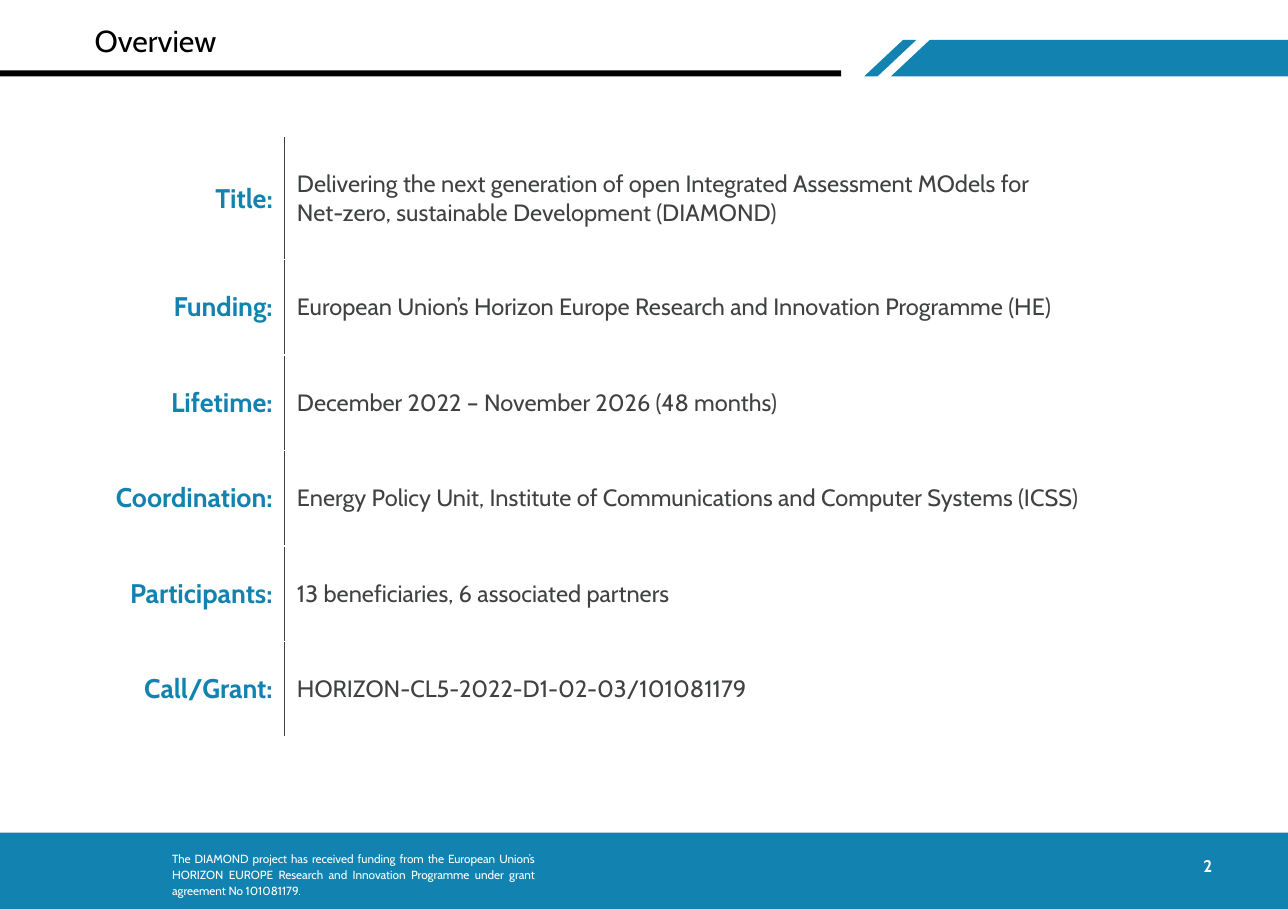
from dataclasses import dataclass

from lxml import etree
from pptx import Presentation
from pptx import util as u
from pptx.dml import color
from pptx.enum import shapes, text
from pptx.oxml import ns


@dataclass(frozen=True)
class Theme:
    font: str = "Cabin"
    blue: str = "1283B1"
    white: str = "FFFFFF"
    black: str = "000000"
    body: str = "404141"
    title_size: float = 18
    label_size: float = 16
    body_size: float = 14
    number_size: float = 10
    note_size: float = 7
    border_width: float = 1
    divider_width: float = 0.5


@dataclass(frozen=True)
class Fact:
    label: str
    lines: tuple[str, ...]


@dataclass(frozen=True)
class Band:
    points: tuple[tuple[float, float], ...]
    fill: str


THEME = Theme()
SLIDE_WIDTH, SLIDE_HEIGHT = 85 / 8, 7.5

BANDS = (
    Band(((7.13, 0.63), (7.45, 0.33), (7.56, 0.33), (7.24, 0.63)), THEME.blue),
    Band(((7.35, 0.63), (7.67, 0.33), (SLIDE_WIDTH, 0.33), (SLIDE_WIDTH, 0.63)), THEME.blue),
)

FACTS = (
    Fact("Title:", ("Delivering the next generation of open Integrated Assessment MOdels for",
                    "Net-zero, sustainable Development (DIAMOND)")),
    Fact("Funding:", ("European Union’s Horizon Europe Research and Innovation Programme (HE)",)),
    Fact("Lifetime:", ("December 2022 – November 2026 (48 months)",)),
    Fact("Coordination:",
         ("Energy Policy Unit, Institute of Communications and Computer Systems (ICSS)",)),
    Fact("Participants:", ("13 beneficiaries, 6 associated partners",)),
    Fact("Call/Grant:", ("HORIZON-CL5-2022-D1-02-03/101081179",)),
)

FUNDING_NOTE = ("The DIAMOND project has received funding from the European Union’s "
                "HORIZON EUROPE Research and Innovation Programme under grant "
                "agreement No 101081179.")


def rgb(value: str) -> color.RGBColor:
    return color.RGBColor.from_string(value)


def write(frame, lines: tuple[str, ...], size: float, ink: str, bold: bool = False,
          align=text.PP_ALIGN.LEFT, spacing: float = 1.0) -> None:
    """Fill a text frame with one paragraph per line."""
    for index, line in enumerate(lines):
        paragraph = frame.add_paragraph() if index else frame.paragraphs[0]
        paragraph.text = line
        paragraph.alignment = align
        paragraph.line_spacing = spacing
        paragraph.font.name = THEME.font
        paragraph.font.size = u.Pt(size)
        paragraph.font.bold = bold
        paragraph.font.color.rgb = rgb(ink)


def paint(shape, fill: str) -> None:
    shape.shadow.inherit = False
    shape.fill.solid()
    shape.fill.fore_color.rgb = rgb(fill)
    shape.line.fill.background()


def add_band(slide, band: Band) -> None:
    start, *rest = [(u.Inches(x), u.Inches(y)) for x, y in band.points]
    builder = slide.shapes.build_freeform(*start)
    builder.add_line_segments(rest, close=True)
    paint(builder.convert_to_shape(), band.fill)


def add_bar(slide, left: float, top: float, width: float, height: float, fill: str) -> None:
    paint(slide.shapes.add_shape(shapes.MSO_SHAPE.RECTANGLE, u.Inches(left), u.Inches(top),
                                 u.Inches(width), u.Inches(height)), fill)


def add_box(slide, left: float, top: float, width: float, height: float, wrap: bool):
    frame = slide.shapes.add_textbox(u.Inches(left), u.Inches(top), u.Inches(width),
                                     u.Inches(height)).text_frame
    frame.word_wrap = wrap
    frame.margin_left = frame.margin_right = u.Inches(0.05)
    frame.margin_top = frame.margin_bottom = u.Inches(0.05)
    return frame


def format_cell(cell, divider_side: str) -> None:
    """White borders, except for the side on the column divider."""
    cell.vertical_anchor = text.MSO_ANCHOR.MIDDLE
    properties = cell._tc.get_or_add_tcPr()
    for side in ("lnL", "lnR", "lnT", "lnB"):
        ink, width = ((THEME.body, THEME.divider_width) if side == divider_side
                      else (THEME.white, THEME.border_width))
        border = etree.SubElement(properties, ns.qn(f"a:{side}"), w=str(u.Pt(width)))
        fill = etree.SubElement(border, ns.qn("a:solidFill"))
        etree.SubElement(fill, ns.qn("a:srgbClr"), val=ink)
    cell.fill.background()


def add_facts(slide, facts: tuple[Fact, ...]) -> None:
    widths = (1.68, 7.6)
    total, first = 4.94, 1
    other = (total - first) / (len(facts) - 1)
    table = slide.shapes.add_table(
        len(facts), len(widths), u.Inches(0.67), u.Inches(1.14), u.Inches(sum(widths)),
        u.Inches(total)).table
    table.first_row = table.horz_banding = False
    for column, width in zip(table.columns, widths):
        column.width = u.Inches(width)
    for index, (row, fact) in enumerate(zip(table.rows, facts)):
        row.height = u.Inches(other if index else first)
        label, detail = row.cells
        format_cell(label, "lnR")
        format_cell(detail, "lnL")
        write(label.text_frame, (fact.label,), THEME.label_size, THEME.blue, True,
              text.PP_ALIGN.RIGHT)
        write(detail.text_frame, fact.lines, THEME.body_size, THEME.body)


def main() -> None:
    deck = Presentation()
    deck.slide_width, deck.slide_height = u.Inches(SLIDE_WIDTH), u.Inches(SLIDE_HEIGHT)
    slide = deck.slides.add_slide(deck.slide_layouts[5])

    # Header
    for band in BANDS:
        add_band(slide, band)
    add_bar(slide, 0, 0.58, 6.94, 0.05, THEME.black)
    heading = slide.shapes.title
    heading.left, heading.top = u.Inches(0.68), u.Inches(0.13)
    heading.width, heading.height = u.Inches(6.97), u.Inches(0.48)
    heading.text_frame.vertical_anchor = text.MSO_ANCHOR.TOP
    write(heading.text_frame, ("Overview",), THEME.title_size, THEME.black)

    # Project facts
    add_facts(slide, FACTS)

    # Footer
    add_bar(slide, 0, 6.87, SLIDE_WIDTH, SLIDE_HEIGHT - 6.87, THEME.blue)
    note = add_box(slide, 1.37, 6.96, 3.09, 0.5, wrap=True)
    write(note, (FUNDING_NOTE,), THEME.note_size, THEME.white,
          align=text.PP_ALIGN.JUSTIFY, spacing=1.15)
    number = add_box(slide, 9.76, 7.01, 0.29, 0.27, wrap=False)
    number.vertical_anchor = text.MSO_ANCHOR.MIDDLE
    write(number, ("2",), THEME.number_size, THEME.white, True, text.PP_ALIGN.RIGHT)

    deck.save("out.pptx")


if __name__ == "__main__":
    main()
